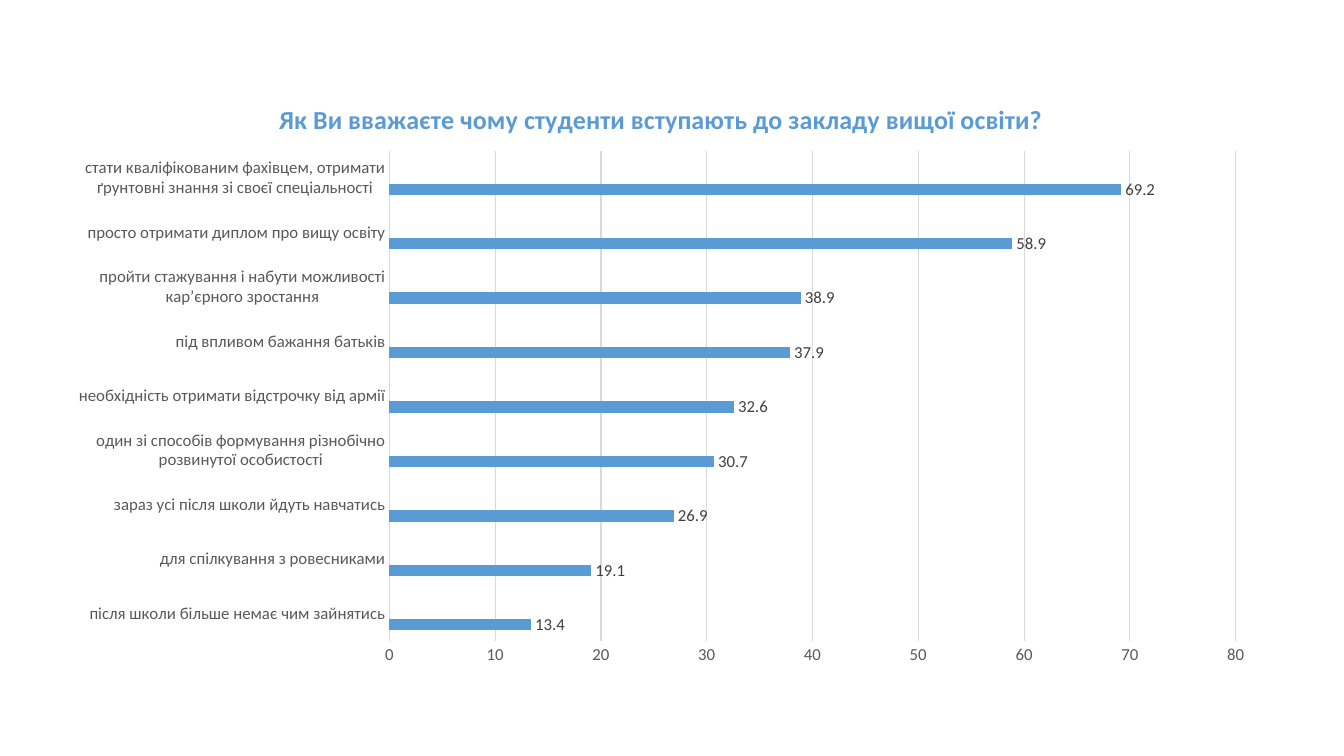
from lxml import etree
from pptx import Presentation
from pptx.chart.data import CategoryChartData
from pptx.dml.color import RGBColor
from pptx.enum.chart import XL_CHART_TYPE, XL_LABEL_POSITION, XL_TICK_MARK
from pptx.oxml.ns import qn
from pptx.util import Inches, Pt

TITLE = "Як Ви вважаєте чому студенти вступають до закладу вищої освіти?"
REASONS = [
    ("після школи більше немає чим зайнятись", 13.4),
    ("для спілкування з ровесниками", 19.1),
    ("зараз усі після школи йдуть навчатись", 26.9),
    ("один зі способів формування різнобічно розвинутої особистості", 30.7),
    ("необхідність отримати відстрочку від армії", 32.6),
    ("під впливом бажання батьків", 37.9),
    ("пройти стажування і набути можливості кар’єрного зростання", 38.9),
    ("просто отримати диплом про вищу освіту", 58.9),
    ("стати кваліфікованим фахівцем, отримати ґрунтовні знання зі своєї спеціальності", 69.2),
]
SERIES_COLORS = ["5B9BD5", "ED7D31", "A5A5A5"]
GRID = "D9D9D9"
PLOT_LAYOUT = {"x": 0.276, "y": 0.119, "w": 0.697, "h": 0.82}


def rgb(value):
    """Return the colour for a hex string."""
    return RGBColor.from_string(value)


def set_font(font, color, **formats):
    """Apply a colour and a dict of format values to a font."""
    for name, value in {"name": "Calibri", "bold": False, **formats}.items():
        setattr(font, name, value)
    font.color.rgb = rgb(color)


def set_line(line, color):
    """Give a line the thin chart style."""
    line.color.rgb = rgb(color)
    line.width = Pt(0.75)


def set_plot_layout(chart, layout):
    """Fix the inner plot area as fractions of the chart."""
    area = chart.element.find(".//" + qn("c:plotArea"))
    for old in area.findall(qn("c:layout")):
        area.remove(old)
    node = etree.Element(qn("c:layout"))
    manual = etree.SubElement(node, qn("c:manualLayout"))
    values = {"layoutTarget": "inner", "xMode": "edge", "yMode": "edge", **layout}
    for name, value in values.items():
        etree.SubElement(manual, qn("c:" + name)).set("val", str(value))
    area.insert(0, node)


def style_axes(chart):
    """Style the category and value axes."""
    cat, val = chart.category_axis, chart.value_axis
    for axis in (cat, val):
        axis.major_tick_mark = axis.minor_tick_mark = XL_TICK_MARK.NONE
        set_font(axis.tick_labels.font, "595959", size=Pt(12))
    set_line(cat.format.line, GRID)
    val.format.line.fill.background()
    set_line(val.major_gridlines.format.line, GRID)
    formats = {"minimum_scale": 0, "maximum_scale": 80, "major_unit": 10}
    for name, value in formats.items():
        setattr(val, name, value)


def style_series(plot):
    """Colour the series and label their bars."""
    for series, color in zip(plot.series, SERIES_COLORS):
        series.format.fill.solid()
        series.format.fill.fore_color.rgb = rgb(color)
        labels = series.data_labels
        labels.show_value = True
        labels.position = XL_LABEL_POSITION.OUTSIDE_END
        set_font(labels.font, "404040", size=Pt(12))


def add_reasons_chart(s, left, top, width, height):
    """Place the titled bar chart of reasons in the given box."""
    names, values = zip(*REASONS)
    data = CategoryChartData()
    data.categories = names
    blanks = [None] * len(names)
    for i, points in enumerate((values, blanks, blanks), 1):
        data.add_series(f"Series {i}", points)
    chart = s.shapes.add_chart(
        XL_CHART_TYPE.BAR_CLUSTERED,
        Inches(left), Inches(top), Inches(width), Inches(height), data,
    ).chart
    set_font(chart.font, "000000", size=Pt(10))
    chart.has_legend = False
    chart.has_title = True
    p = chart.chart_title.text_frame.paragraphs[0]
    r = p.add_run()
    r.text = TITLE
    set_font(r.font, "5B9BD5", size=Pt(18.6), bold=True)
    chart.chart_title.include_in_layout = False
    plot = chart.plots[0]
    for name, value in {"gap_width": 182, "overlap": 0, "vary_by_categories": False}.items():
        setattr(plot, name, value)
    style_axes(chart)
    style_series(plot)
    set_plot_layout(chart, PLOT_LAYOUT)


def main():
    """Build and save the slide."""
    prs = Presentation()
    prs.slide_width, prs.slide_height = Inches(13.33), Inches(7.5)
    s = prs.slides.add_slide(prs.slide_layouts[6])
    add_reasons_chart(s, 0.54, 0.79, 12.04, 5.93)
    prs.save("out.pptx")


if __name__ == "__main__":
    main()
